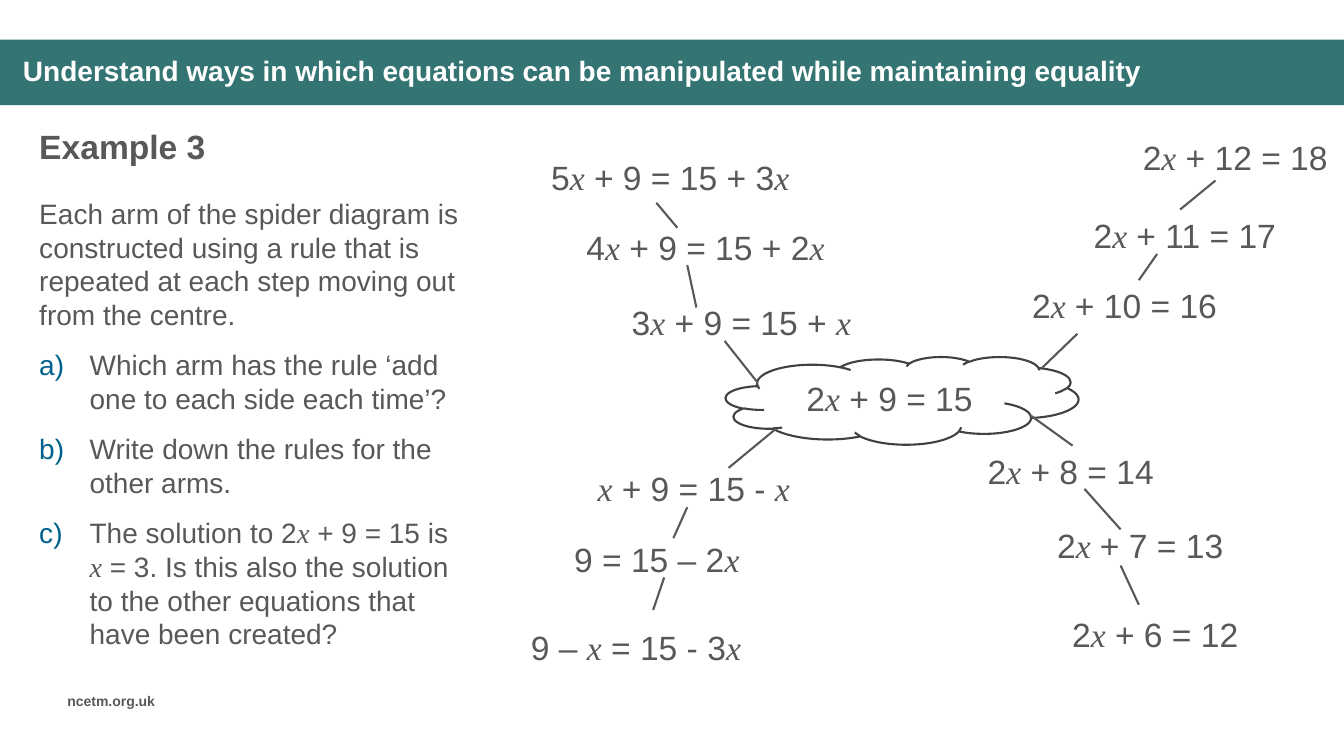
from lxml.etree import SubElement
from pptx import Presentation
from pptx.dml.color import RGBColor
from pptx.enum.shapes import MSO_CONNECTOR, MSO_SHAPE
from pptx.enum.text import MSO_ANCHOR, PP_ALIGN
from pptx.oxml.ns import qn
from pptx.util import Cm, Pt

TEAL = RGBColor(0x34, 0x75, 0x74)
GREY = RGBColor(0x58, 0x58, 0x58)
DARK = RGBColor(0x41, 0x41, 0x41)
BLUE = RGBColor(0x00, 0x62, 0x8C)
WHITE = RGBColor(0xFF, 0xFF, 0xFF)

TITLE = {"size": Pt(20), "bold": True, "color": WHITE}
HEADING = {"size": Pt(24), "bold": True, "color": GREY}
FOOTER = {"size": Pt(10), "bold": True, "color": GREY}
BODY = {"size": Pt(20), "color": GREY}
EQUATION = {"size": Pt(24), "color": GREY}

INTRO = ("Each arm of the spider diagram is constructed using a rule that is "
         "repeated at each step moving out from the centre.")
QUESTIONS = [
    "Which arm has the rule ‘add one to each side each time’?",
    "Write down the rules for the other arms.",
    "The solution to 2|x| + 9 = 15 is |x| = 3. Is this also the solution "
    "to the other equations that have been created?",
]

ARMS = {
    "top right": [
        ("2|x| + 10 = 16", 25.76, 7.06, 5.26, (26.26, 9.27, 27.15, 8.41)),
        ("2|x| + 11 = 17", 27.31, 5.28, 5.21, (28.7, 7.06, 29.16, 6.4)),
        ("2|x| + 12 = 18", 28.55, 3.33, 5.26, (29.74, 5.28, 30.63, 4.55)),
    ],
    "bottom right": [
        ("2|x| + 8 = 14", 24.64, 11.23, 4.78, (25.96, 10.46, 27.03, 11.23)),
        ("2|x| + 7 = 13", 26.39, 13.11, 4.78, (27.33, 12.32, 28.24, 13.34)),
        ("2|x| + 6 = 12", 26.77, 15.34, 4.78, (28.24, 14.25, 28.7, 15.24)),
    ],
    "bottom left": [
        ("x| + 9 = 15 - |x", 14.81, 11.66, 5.49, (19.56, 10.8, 18.36, 11.79)),
        ("9 = 15 – 2|x", 14.22, 13.46, 4.78, (17.32, 12.78, 16.97, 13.56)),
        ("9 – |x| = 15 - 3|x", 13.13, 15.67, 5.94, (16.74, 14.55, 16.46, 15.37)),
    ],
    "top left": [
        ("3|x| + 9 = 15 + |x", 15.67, 7.49, 6.2, (19.1, 9.65, 18.26, 8.59)),
        ("4|x| + 9 = 15 + 2|x", 14.53, 5.59, 6.65, (17.55, 7.75, 17.32, 6.68)),
        ("5|x| + 9 = 15 + 3|x", 13.64, 3.84, 6.65, (17.07, 5.74, 16.54, 5.11)),
    ],
}


def write(p, text, fmt):
    """Write runs parted by bars, with each lone x as an italic variable."""
    for part in text.split("|"):
        r = p.add_run()
        r.text = part
        variable = part == "x"
        r.font.name = "Times New Roman" if variable else "Arial"
        r.font.italic = variable
        for name, value in fmt.items():
            if name == "color":
                r.font.color.rgb = value
            else:
                setattr(r.font, name, value)


def add_text(s, text, left, top, width, height, fmt, wrap=True):
    """Add a text box with one paragraph and return its text frame."""
    tf = s.shapes.add_textbox(Cm(left), Cm(top), Cm(width), Cm(height)).text_frame
    tf.word_wrap = wrap
    write(tf.paragraphs[0], text, fmt)
    return tf


def add_shape(s, kind, left, top, width, height, fill, line=None):
    """Add a filled preset shape without a shadow."""
    sp = s.shapes.add_shape(kind, Cm(left), Cm(top), Cm(width), Cm(height))
    sp.shadow.inherit = False
    sp.fill.solid()
    sp.fill.fore_color.rgb = fill
    if line is None:
        sp.line.fill.background()
    else:
        sp.line.color.rgb = line
        sp.line.width = Pt(1.5)
    return sp


def add_link(s, ends):
    """Add a straight link between two steps of an arm."""
    link = s.shapes.add_connector(MSO_CONNECTOR.STRAIGHT, *map(Cm, ends))
    link.line.color.rgb = GREY
    link.line.width = Pt(1.5)
    SubElement(link._element.spPr, qn("a:effectLst"))


def add_letter(p):
    """Give a paragraph a hanging blue letter."""
    pPr = p._p.get_or_add_pPr()
    pPr.set("marL", str(Cm(1.27)))
    pPr.set("indent", str(-Cm(1.27)))
    color = SubElement(pPr, qn("a:buClr"))
    SubElement(color, qn("a:srgbClr"), val=str(BLUE))
    SubElement(pPr, qn("a:buAutoNum"), type="alphaLcParenR")


def add_questions(s):
    """Add the introduction and the lettered questions."""
    tf = add_text(s, INTRO, 0.74, 4.83, 11.1, 11.79, BODY)
    for question in QUESTIONS:
        p = tf.add_paragraph()
        add_letter(p)
        write(p, question, BODY)
    for p in tf.paragraphs:
        p.space_after = Pt(12)


def add_spider(s):
    """Add the central cloud and the four arms around it."""
    cloud = add_shape(s, MSO_SHAPE.CLOUD, 18.29, 8.99, 8.89, 2.21, WHITE, DARK)
    tf = cloud.text_frame
    tf.vertical_anchor = MSO_ANCHOR.MIDDLE
    p = tf.paragraphs[0]
    p.alignment = PP_ALIGN.CENTER
    write(p, "2|x| + 9 = 15", EQUATION)
    for steps in ARMS.values():
        for text, left, top, width, ends in steps:
            add_link(s, ends)
            add_text(s, text, left, top, width, 1.27, EQUATION, wrap=False)


def main():
    """Build the slide and save it."""
    prs = Presentation()
    prs.slide_width, prs.slide_height = Cm(33.87), Cm(19.05)
    s = prs.slides.add_slide(prs.slide_layouts[6])
    add_shape(s, MSO_SHAPE.RECTANGLE, 0, 1, 33.87, 1.65, TEAL)
    add_text(s, "ncetm.org.uk", 1.45, 17.32, 3.07, 0.69, FOOTER)
    tf = add_text(s, "Understand ways in which equations can be manipulated "
                  "while maintaining equality", 0.33, 1.24, 29.41, 1.19, TITLE)
    tf.vertical_anchor = MSO_ANCHOR.MIDDLE
    tf.paragraphs[0].line_spacing = 0.9
    add_text(s, "Example 3", 0.74, 3.05, 16.92, 1.27, HEADING)
    add_questions(s)
    add_spider(s)
    prs.save("out.pptx")


if __name__ == "__main__":
    main()
